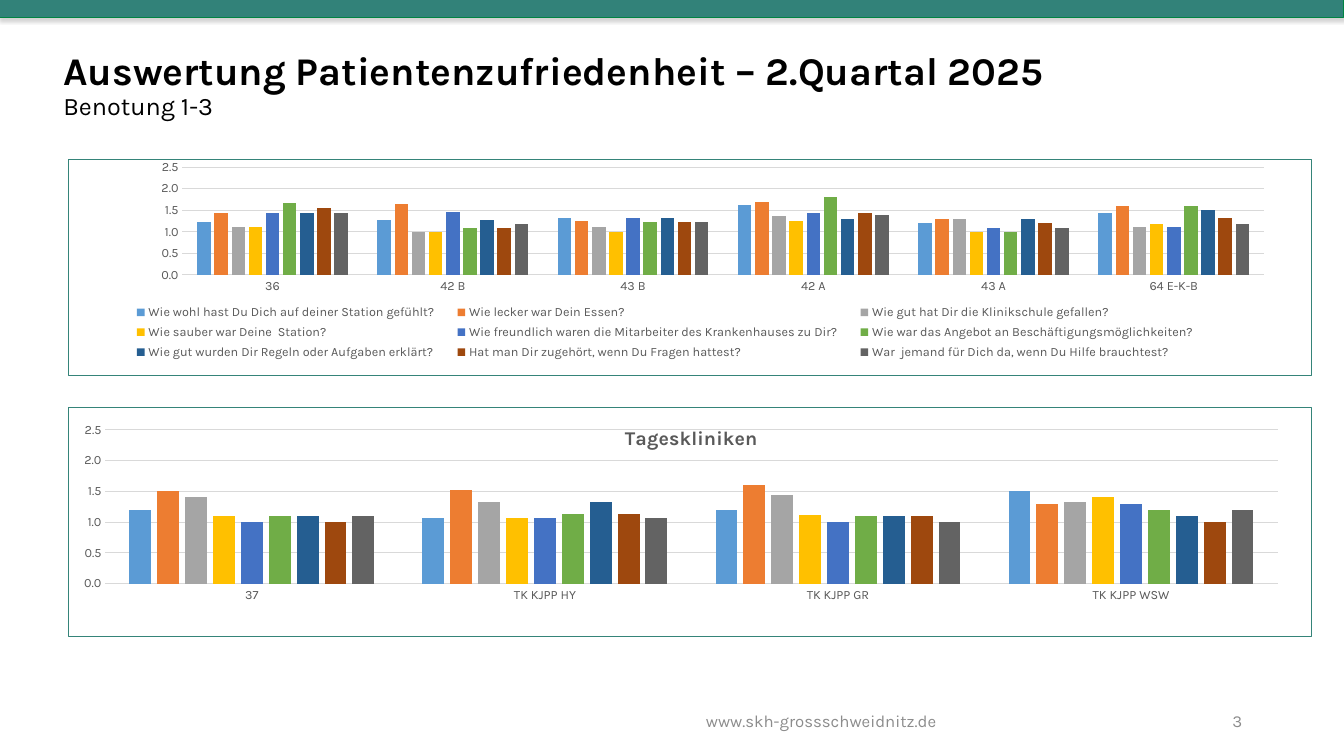
from dataclasses import dataclass

from pptx import Presentation
from pptx.chart.data import CategoryChartData
from pptx.dml.color import RGBColor
from pptx.enum.chart import XL_CHART_TYPE, XL_LEGEND_POSITION, XL_TICK_MARK
from pptx.enum.shapes import MSO_SHAPE
from pptx.enum.text import MSO_ANCHOR, PP_ALIGN
from pptx.oxml import parse_xml
from pptx.oxml.ns import nsdecls, qn
from pptx.util import Inches, Pt


@dataclass(frozen=True)
class Theme:
    """Fonts, colours and type sizes of the deck."""

    font: str = "Karla"
    ink: str = "000000"
    footer: str = "8C8C8C"
    label: str = "595959"
    grid: str = "D9D9D9"
    band: str = "328279"
    band_line: str = "008442"
    border: str = "358479"
    shadow: str = "808080"
    series: tuple = ("5B9BD5", "ED7D31", "A5A5A5", "FFC000", "4472C4",
                     "70AD47", "255E91", "9E480E", "636363")
    title_size: int = 28
    subtitle_size: int = 18
    chart_title_size: int = 14
    footer_size: int = 12
    chart_size: int = 10
    label_size: int = 9
    hairline: float = 0.75


QUESTIONS = (
    "Wie wohl hast Du Dich auf deiner Station gefühlt?",
    "Wie lecker war Dein Essen?",
    "Wie gut hat Dir die Klinikschule gefallen?",
    "Wie sauber war Deine  Station?",
    "Wie freundlich waren die Mitarbeiter des Krankenhauses zu Dir?",
    "Wie war das Angebot an Beschäftigungsmöglichkeiten?",
    "Wie gut wurden Dir Regeln oder Aufgaben erklärt?",
    "Hat man Dir zugehört, wenn Du Fragen hattest?",
    "War  jemand für Dich da, wenn Du Hilfe brauchtest?",
)
WARDS = {
    "36": (1.22, 1.44, 1.12, 1.11, 1.44, 1.67, 1.44, 1.56, 1.44),
    "42 B": (1.27, 1.64, 1, 1, 1.45, 1.09, 1.27, 1.09, 1.18),
    "43 B": (1.33, 1.25, 1.12, 1, 1.33, 1.22, 1.33, 1.22, 1.22),
    "42 A": (1.62, 1.69, 1.36, 1.25, 1.44, 1.8, 1.31, 1.44, 1.38),
    "43 A": (1.2, 1.3, 1.3, 1, 1.1, 1, 1.3, 1.2, 1.1),
    "64 E-K-B": (1.44, 1.61, 1.12, 1.17, 1.11, 1.61, 1.5, 1.33, 1.17),
}
DAY_CLINICS = {
    "37": (1.2, 1.5, 1.4, 1.1, 1, 1.1, 1.1, 1, 1.1),
    "TK KJPP HY": (1.07, 1.53, 1.33, 1.07, 1.07, 1.13, 1.33, 1.13, 1.07),
    "TK KJPP GR": (1.2, 1.6, 1.44, 1.11, 1, 1.1, 1.1, 1.1, 1),
    "TK KJPP WSW": (1.5, 1.3, 1.33, 1.4, 1.3, 1.2, 1.1, 1, 1.2),
}


class SlideBuilder:
    """Draws themed elements on one slide."""

    def __init__(self, page, theme):
        self.page = page
        self.theme = theme

    def style(self, font, size, color, bold=False):
        """Apply the theme font with a size, colour and weight."""
        font.name = self.theme.font
        font.size = Pt(size)
        font.bold = bold
        font.color.rgb = RGBColor.from_string(color)

    def outline(self, line, color):
        """Give a line the hairline width and a colour."""
        line.color.rgb = RGBColor.from_string(color)
        line.width = Pt(self.theme.hairline)

    def band(self, left, top, width, height):
        """Draw the header band with its soft shadow."""
        band = self.page.shapes.add_shape(
            MSO_SHAPE.RECTANGLE, *map(Inches, (left, top, width, height)))
        band.fill.solid()
        band.fill.fore_color.rgb = RGBColor.from_string(self.theme.band)
        self.outline(band.line, self.theme.band_line)
        band.shadow.inherit = False
        effects = band.element.spPr.find(qn("a:effectLst"))
        effects.append(parse_xml(
            f'<a:outerShdw {nsdecls("a")} blurRad="{Pt(3.1)}" dist="{Pt(1.8)}" '
            f'dir="5400000" rotWithShape="0"><a:srgbClr val="{self.theme.shadow}">'
            '<a:alpha val="35000"/></a:srgbClr></a:outerShdw>'))

    def text(self, area, lines, color, align=PP_ALIGN.LEFT, spacing=1.0):
        """Add a middle-anchored box of (text, size, bold) lines."""
        box = self.page.shapes.add_textbox(*map(Inches, area))
        frame = box.text_frame
        frame.word_wrap = True
        frame.vertical_anchor = MSO_ANCHOR.MIDDLE
        para = frame.paragraphs[0]
        para.alignment = align
        para.line_spacing = spacing
        for index, (words, size, bold) in enumerate(lines):
            if index:
                para.add_line_break()
            span = para.add_run()
            span.text = words
            self.style(span.font, size, color, bold)

    def place(self, part, index, left, top, width=None, height=None, inner=False):
        """Fix a chart part at fractions of the chart area."""
        for old in part.findall(qn("c:layout")):
            part.remove(old)
        target = '<c:layoutTarget val="inner"/>' if inner else ""
        modes = '<c:xMode val="edge"/><c:yMode val="edge"/>'
        values = "".join(
            f'<c:{key} val="{value}"/>'
            for key, value in zip("xywh", (left, top, width, height))
            if value is not None)
        part.insert(index, parse_xml(
            f'<c:layout {nsdecls("c")}><c:manualLayout>{target}{modes}{values}'
            "</c:manualLayout></c:layout>"))

    def column_chart(self, area, grades, plot, title=None, legend=None):
        """Add a bordered clustered column chart of the grades."""
        theme = self.theme
        data = CategoryChartData(number_format="0.0")
        data.categories = list(grades)
        for question, values in zip(QUESTIONS, zip(*grades.values())):
            data.add_series(question, values)
        chart = self.page.shapes.add_chart(
            XL_CHART_TYPE.COLUMN_CLUSTERED, *map(Inches, area), data).chart
        self.style(chart.font, theme.chart_size, theme.ink)
        bars = chart.plots[0]
        bars.gap_width = 219
        bars.overlap = -27
        bars.vary_by_categories = False
        for series, color in zip(bars.series, theme.series):
            series.format.fill.solid()
            series.format.fill.fore_color.rgb = RGBColor.from_string(color)
        self.axes(chart)
        root = chart.element.find(qn("c:chart"))
        self.place(root.find(qn("c:plotArea")), 0, *plot, inner=True)
        root.addnext(parse_xml(
            f'<c:spPr {nsdecls("c", "a")}><a:noFill/><a:ln w="{Pt(theme.hairline)}">'
            f'<a:solidFill><a:srgbClr val="{theme.border}"/></a:solidFill>'
            "</a:ln></c:spPr>"))
        chart.has_title = title is not None
        if title:
            heading = chart.chart_title
            span = heading.text_frame.paragraphs[0].add_run()
            span.text = title
            self.style(span.font, theme.chart_title_size, theme.label, True)
            heading.include_in_layout = True
            root.find(qn("c:title")).find(qn("c:overlay")).set("val", "1")
            self.place(root.find(qn("c:title")), 1, 0.445, 0.06)
        chart.has_legend = legend is not None
        if legend:
            chart.legend.position = XL_LEGEND_POSITION.BOTTOM
            chart.legend.include_in_layout = False
            self.style(chart.legend.font, theme.label_size, theme.label)
            self.place(root.find(qn("c:legend")), 1, *legend)

    def axes(self, chart):
        """Style both axes and the grid of a grade chart."""
        for axis in (chart.category_axis, chart.value_axis):
            axis.major_tick_mark = axis.minor_tick_mark = XL_TICK_MARK.NONE
            self.style(axis.tick_labels.font, self.theme.label_size, self.theme.label)
        self.outline(chart.category_axis.format.line, self.theme.grid)
        scale = chart.value_axis
        scale.minimum_scale, scale.maximum_scale, scale.major_unit = 0, 2.5, 0.5
        scale.tick_labels.number_format = "0.0"
        scale.tick_labels.number_format_is_linked = False
        scale.format.line.fill.background()
        self.outline(scale.major_gridlines.format.line, self.theme.grid)


def main():
    """Build the patient satisfaction slide."""
    deck = Presentation()
    deck.slide_width, deck.slide_height = Inches(13.33), Inches(7.5)
    theme = Theme()
    builder = SlideBuilder(deck.slides.add_slide(deck.slide_layouts[6]), theme)
    builder.band(0, 0, 13.33, 0.17)
    builder.text((0.53, 0.13, 11.5, 1.45), (
        ("Auswertung Patientenzufriedenheit – 2.Quartal 2025", theme.title_size, True),
        ("Benotung 1-3", theme.subtitle_size, False)), theme.ink, spacing=0.9)
    builder.text((4.82, 6.95, 6.65, 0.4), (
        ("www.skh-grossschweidnitz.de", theme.footer_size, False),),
        theme.footer, PP_ALIGN.CENTER)
    builder.text((11.76, 6.95, 0.66, 0.4), (("3", theme.footer_size, False),),
                 theme.footer, PP_ALIGN.RIGHT)
    builder.column_chart((0.67, 4.04, 12.34, 2.28), DAY_CLINICS,
                         (0.03, 0.097, 0.943, 0.672), title="Tageskliniken")
    builder.column_chart((0.67, 1.58, 12.34, 2.15), WARDS,
                         (0.092, 0.035, 0.87, 0.499), legend=(0.04, 0.65, 0.88, 0.3))
    deck.save("out.pptx")


if __name__ == "__main__":
    main()
